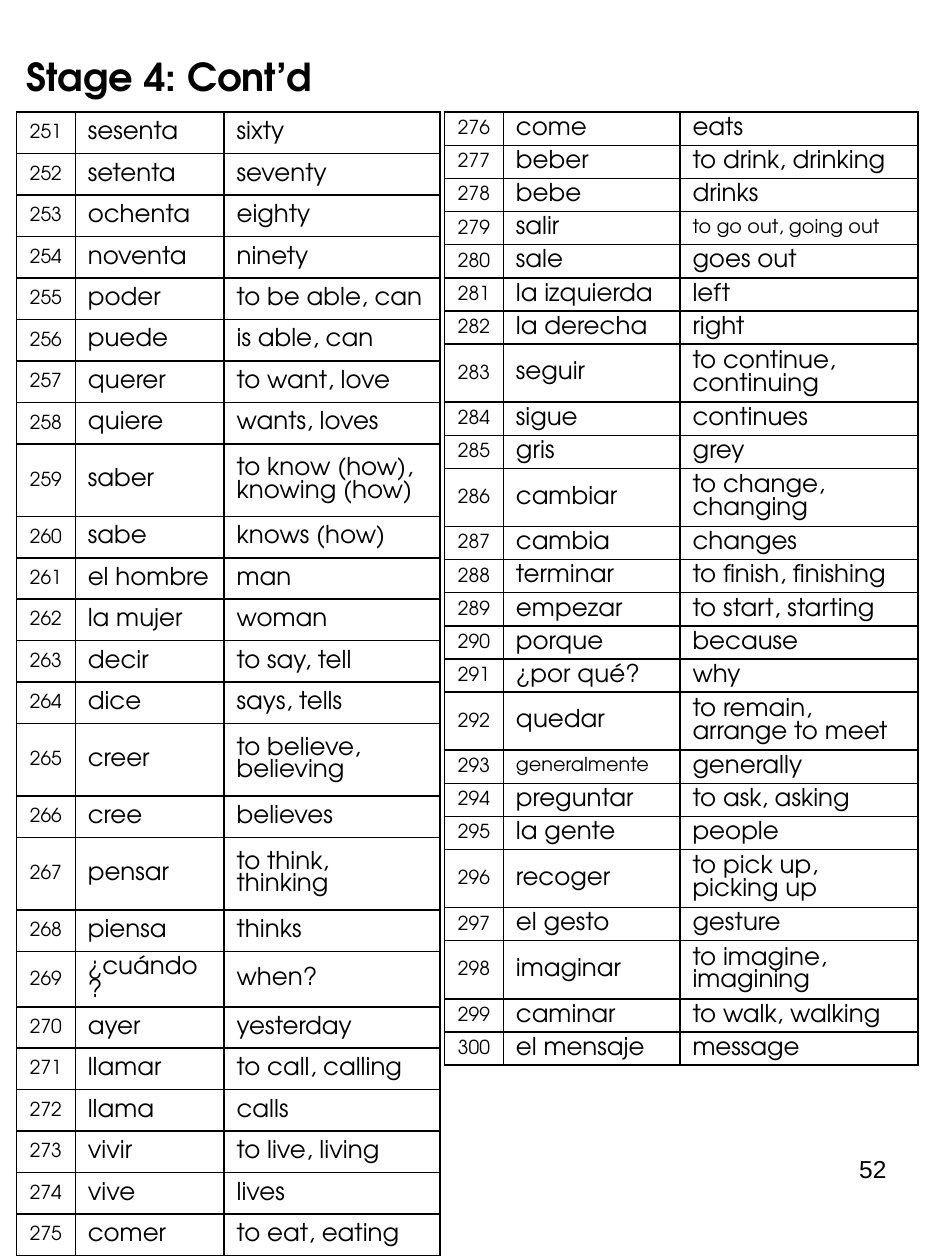
from lxml import etree
from pptx import Presentation
from pptx.dml.color import RGBColor
from pptx.enum.text import MSO_ANCHOR, PP_ALIGN
from pptx.oxml.ns import qn
from pptx.util import Cm, Pt

MIDDLE = MSO_ANCHOR.MIDDLE
LEFT, CENTER, RIGHT = PP_ALIGN.LEFT, PP_ALIGN.CENTER, PP_ALIGN.RIGHT
FONT = "TeX Gyre Adventor"
BLACK = "000000"

TITLE = "Stage 4: Cont’d"
PAGE_NUMBER = "52"

WORDS_FROM_251 = [
    ("sesenta", "sixty"),
    ("setenta", "seventy"),
    ("ochenta", "eighty"),
    ("noventa", "ninety"),
    ("poder", "to be able, can"),
    ("puede", "is able, can"),
    ("querer", "to want, love"),
    ("quiere", "wants, loves"),
    ("saber", "to know (how), knowing (how)"),
    ("sabe", "knows (how)"),
    ("el hombre", "man"),
    ("la mujer", "woman"),
    ("decir", "to say, tell"),
    ("dice", "says, tells"),
    ("creer", "to believe, believing"),
    ("cree", "believes"),
    ("pensar", "to think, thinking"),
    ("piensa", "thinks"),
    ("¿cuándo?", "when?"),
    ("ayer", "yesterday"),
    ("llamar", "to call, calling"),
    ("llama", "calls"),
    ("vivir", "to live, living"),
    ("vive", "lives"),
    ("comer", "to eat, eating"),
]
WORDS_FROM_276 = [
    ("come", "eats"),
    ("beber", "to drink, drinking"),
    ("bebe", "drinks"),
    ("salir", "to go out, going out"),
    ("sale", "goes out"),
    ("la izquierda", "left"),
    ("la derecha", "right"),
    ("seguir", "to continue, continuing"),
    ("sigue", "continues"),
    ("gris", "grey"),
    ("cambiar", "to change, changing"),
    ("cambia", "changes"),
    ("terminar", "to finish, finishing"),
    ("empezar", "to start, starting"),
    ("porque", "because"),
    ("¿por qué?", "why"),
    ("quedar", "to remain, arrange to meet"),
    ("generalmente", "generally"),
    ("preguntar", "to ask, asking"),
    ("la gente", "people"),
    ("recoger", "to pick up, picking up"),
    ("el gesto", "gesture"),
    ("imaginar", "to imagine, imagining"),
    ("caminar", "to walk, walking"),
    ("el mensaje", "message"),
]
SMALL_WORDS = {"to go out, going out", "generalmente"}
TWO_LINE_VERBS = {"saber", "creer", "pensar", "seguir", "cambiar", "quedar", "recoger", "imaginar"}

# Lengths in centimetres
TABLE_TOP = 2.26
TABLES = [
    {"first": 251, "words": WORDS_FROM_251, "left": 0.33, "columns": (1.19, 3, 4.35),
     "height": 22.78, "tall_row": 1.46},
    {"first": 276, "words": WORDS_FROM_276, "left": 8.96, "columns": (1.19, 3.56, 4.8),
     "height": 19.21, "tall_row": 1.17},
]


def add_text(text_frame, text, size, align=LEFT, font=FONT, bold=False, color=BLACK):
    paragraph = text_frame.paragraphs[0]
    paragraph.alignment = align
    run = paragraph.add_run()
    run.text = text
    run.font.name = font
    run.font.size = Pt(size)
    run.font.bold = bold
    run.font.color.rgb = RGBColor.from_string(color)


def add_borders(cell, color=BLACK):
    properties = cell._tc.get_or_add_tcPr()
    for side in ("a:lnL", "a:lnR", "a:lnT", "a:lnB"):
        line = etree.SubElement(properties, qn(side), w=str(Pt(1)))
        fill = etree.SubElement(line, qn("a:solidFill"))
        etree.SubElement(fill, qn("a:srgbClr"), val=color)


def fill_cell(cell, text, is_number):
    cell.vertical_anchor = MIDDLE
    if is_number:
        cell.margin_left = cell.margin_right = cell.margin_top = Cm(0.03)
        cell.margin_bottom = 0
    else:
        cell.margin_left = cell.margin_right = Cm(0.25)
        cell.margin_top = cell.margin_bottom = Cm(0.1)
    size = 11 if is_number or text in SMALL_WORDS else 14
    add_text(cell.text_frame, text, size, CENTER if is_number else LEFT)
    add_borders(cell)
    cell.fill.background()


def add_word_table(slide, first, words, left, columns, height, tall_row):
    """Share the height left over by the two-line rows among the other rows."""
    tall_count = sum(spanish in TWO_LINE_VERBS for spanish, _ in words)
    short_row = (height - tall_count * tall_row) / (len(words) - tall_count)
    table = slide.shapes.add_table(
        len(words), len(columns), Cm(left), Cm(TABLE_TOP), Cm(sum(columns)), Cm(height)
    ).table
    table.first_row = table.horz_banding = False
    for column, width in zip(table.columns, columns):
        column.width = Cm(width)
    for index, (spanish, english) in enumerate(words):
        row = table.rows[index]
        row.height = Cm(tall_row if spanish in TWO_LINE_VERBS else short_row)
        for position, text in enumerate((str(first + index), spanish, english)):
            fill_cell(row.cells[position], text, position == 0)


def main():
    presentation = Presentation()
    presentation.slide_width, presentation.slide_height = Cm(19.05), Cm(25.4)
    slide = presentation.slides.add_slide(presentation.slide_layouts[5])

    title = slide.shapes.title
    title.left, title.top, title.width, title.height = Cm(-0.08), Cm(0.91), Cm(6.99), Cm(1.24)
    title.text_frame.vertical_anchor = MIDDLE
    add_text(title.text_frame, TITLE, 22, CENTER, bold=True)

    for table in TABLES:
        add_word_table(slide, **table)

    page_box = slide.shapes.add_textbox(Cm(13.67), Cm(23.14), Cm(4.45), Cm(1.75))
    page_box.text_frame.word_wrap = True
    add_text(page_box.text_frame, PAGE_NUMBER, 14, RIGHT, font="Arial")

    presentation.save("out.pptx")


if __name__ == "__main__":
    main()
